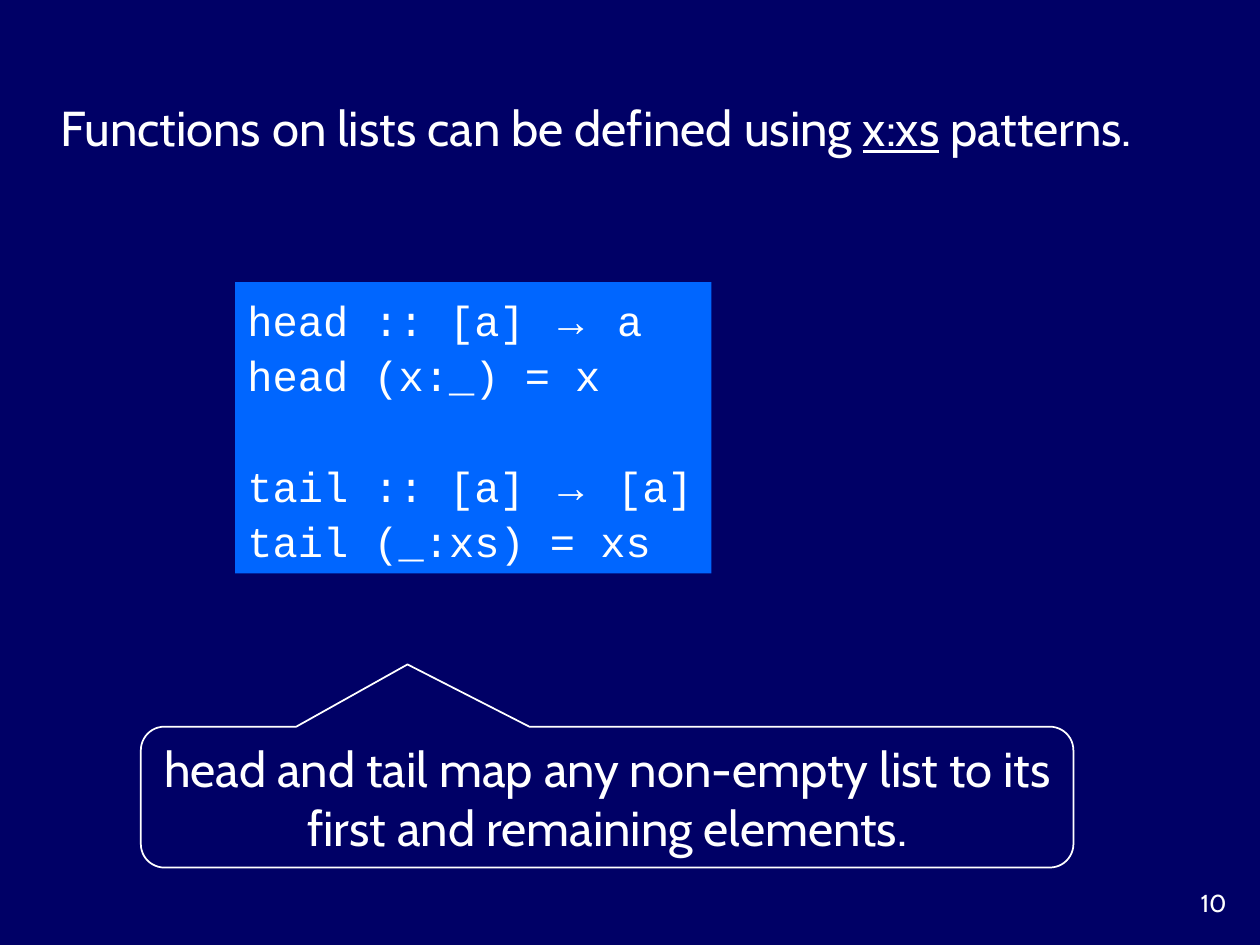
import pptx
import pptx.dml.color
import pptx.enum.shapes
import pptx.enum.text
import pptx.util
from dataclasses import dataclass

Cm = pptx.util.Cm
Pt = pptx.util.Pt
Shape = pptx.enum.shapes.MSO_SHAPE
Align = pptx.enum.text.PP_ALIGN
Anchor = pptx.enum.text.MSO_ANCHOR
Color = pptx.dml.color.RGBColor


@dataclass(frozen=True)
class Theme:
    back: Color = Color(0x00, 0x00, 0x66)
    panel: Color = Color(0x00, 0x66, 0xFF)
    ink: Color = Color(0xFF, 0xFF, 0xFF)
    sans: str = "Cabin"
    mono: str = "Courier New"
    serif: str = "Times New Roman"
    body: Pt = Pt(28)
    code: Pt = Pt(24)
    small: Pt = Pt(14)


theme = Theme()


def write(para, text, size, face=theme.sans):
    """Add one run to the paragraph and return it."""
    run = para.add_run()
    run.text = text
    run.font.size = size
    run.font.name = face
    run.font.color.rgb = theme.ink
    return run


deck = pptx.Presentation()
deck.slide_width, deck.slide_height = Cm(25.4), Cm(19.05)
slide = deck.slides.add_slide(deck.slide_layouts[5])
slide.background.fill.solid()
slide.background.fill.fore_color.rgb = theme.back
shapes = slide.shapes

# Title
title = shapes.title
title.left, title.top = Cm(0.97), Cm(1.83)
title.width, title.height = Cm(23.85), Cm(1.45)
frame = title.text_frame
frame.auto_size = pptx.enum.text.MSO_AUTO_SIZE.NONE
frame.vertical_anchor = Anchor.MIDDLE
para = frame.paragraphs[0]
para.alignment = Align.LEFT
write(para, "Functions on lists can be defined using ", theme.body)
write(para, "x:xs", theme.body).font.underline = True
write(para, " patterns.", theme.body)

# Code panel: each definition is a signature and an equation
defs = [
    ("head :: [a] ", " a", "head (x:_) = x"),
    ("tail :: [a] ", " [a]", "tail (_:xs) = xs"),
]
panel = shapes.add_shape(Shape.RECTANGLE, Cm(4.74), Cm(5.69), Cm(9.6), Cm(5.87))
panel.shadow.inherit = False
panel.fill.solid()
panel.fill.fore_color.rgb = theme.panel
panel.line.fill.background()
frame = panel.text_frame
frame.word_wrap = False
frame.vertical_anchor = Anchor.MIDDLE
for index, (name, result, rule) in enumerate(defs):
    if index:
        para = frame.add_paragraph()
        para.space_before = Pt(31.5)
    else:
        para = frame.paragraphs[0]
    write(para, name, theme.code, theme.mono)
    write(para, "→", theme.code, theme.serif)
    write(para, result, theme.code, theme.mono)
    write(frame.add_paragraph(), rule, theme.code, theme.mono)
for para in frame.paragraphs:
    para.alignment = Align.LEFT
    para.line_spacing = 1.1

# Callout pointing up at the code
note = shapes.add_shape(
    Shape.ROUNDED_RECTANGULAR_CALLOUT, Cm(2.84), Cm(14.65), Cm(18.8), Cm(2.84)
)
for index, value in enumerate((-0.214, -0.942, 0.167)):
    note.adjustments[index] = value
note.shadow.inherit = False
note.fill.background()
note.line.color.rgb = theme.ink
note.line.width = Pt(1)
frame = note.text_frame
frame.word_wrap = True
frame.vertical_anchor = Anchor.MIDDLE
para = frame.paragraphs[0]
para.alignment = Align.CENTER
write(
    para,
    "head and tail map any non-empty list to its first and remaining elements.",
    theme.body,
)

# Page number
page = shapes.add_textbox(Cm(23.28), Cm(17.78), Cm(1.7), Cm(0.84))
page.text_frame.word_wrap = True
para = page.text_frame.paragraphs[0]
para.alignment = Align.RIGHT
write(para, "10", theme.small)

deck.save("out.pptx")
